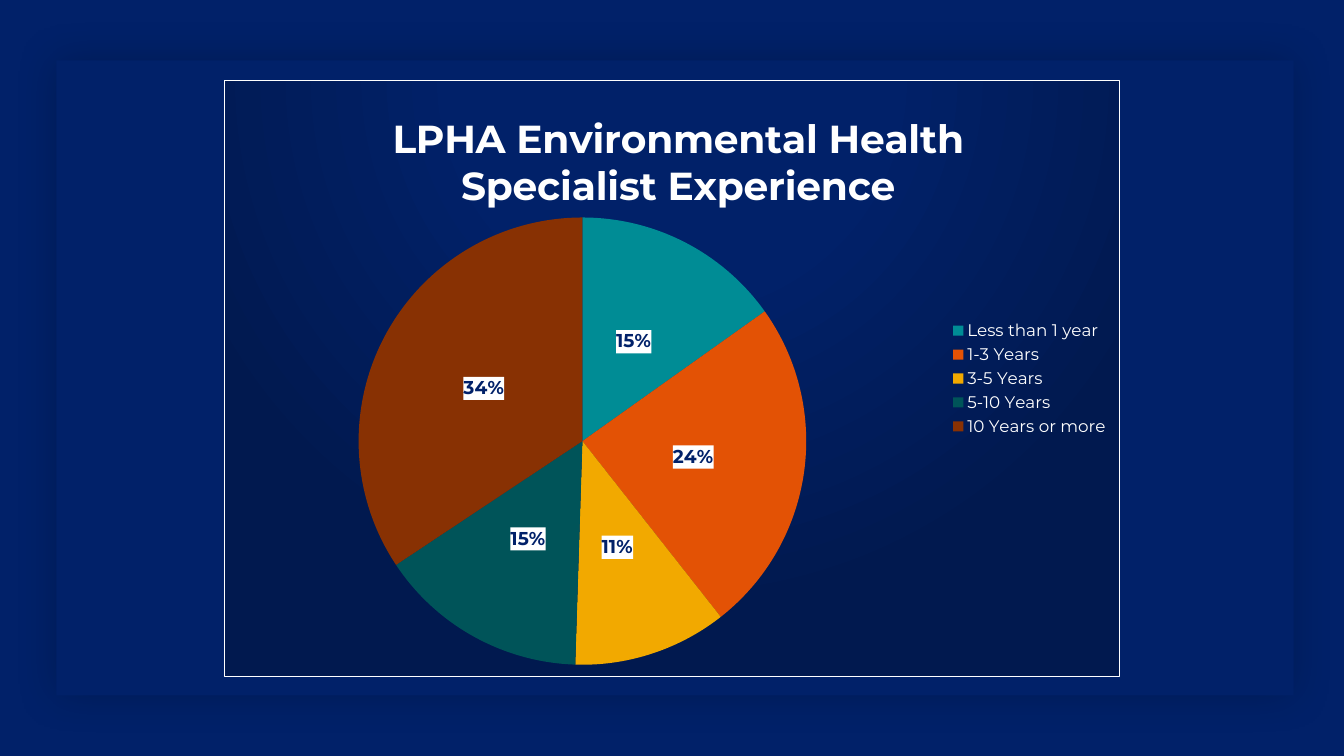
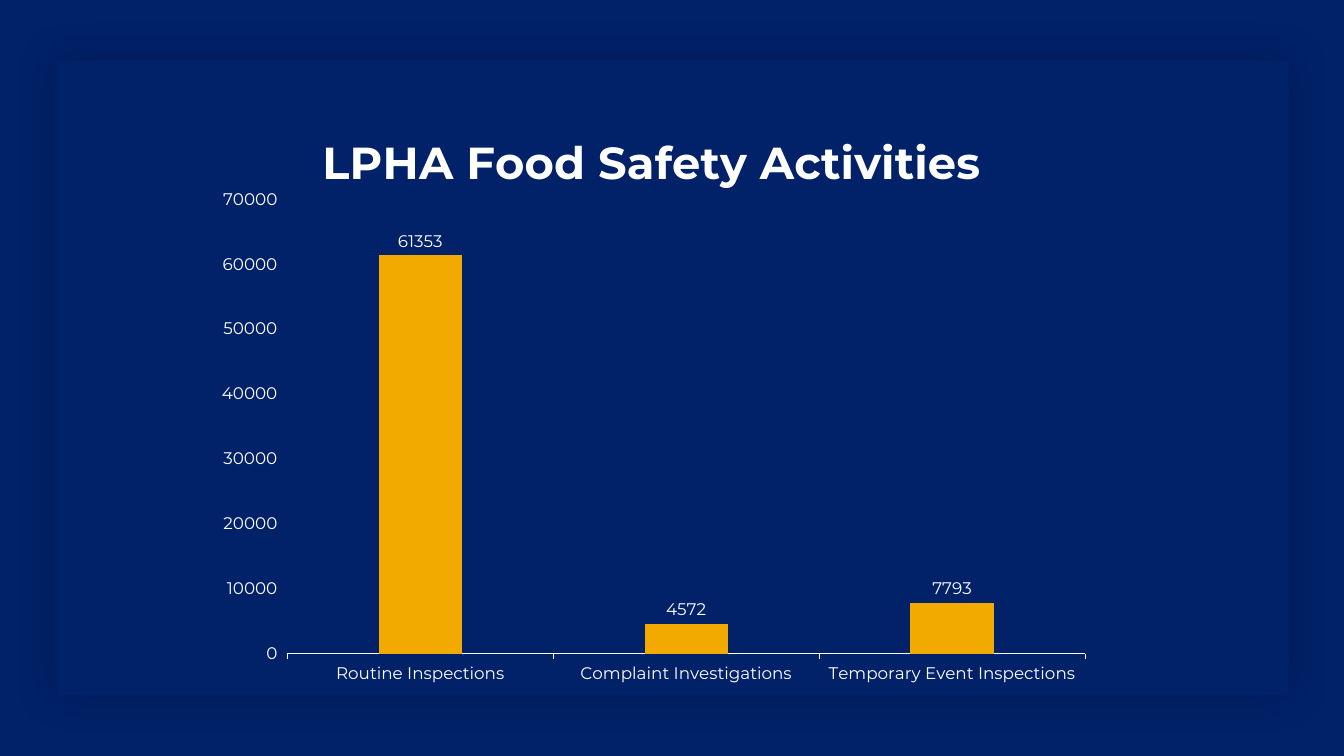
from lxml import etree
from pptx import Presentation
from pptx.chart.data import CategoryChartData
from pptx.dml.color import RGBColor
from pptx.enum.chart import XL_CHART_TYPE, XL_LABEL_POSITION, XL_LEGEND_POSITION, XL_TICK_MARK
from pptx.enum.shapes import MSO_SHAPE
from pptx.oxml import parse_xml
from pptx.oxml.ns import nsdecls, qn
from pptx.util import Inches, Pt

PIE, COLUMNS = XL_CHART_TYPE.PIE, XL_CHART_TYPE.COLUMN_CLUSTERED
CENTER, OUTSIDE_END = XL_LABEL_POSITION.CENTER, XL_LABEL_POSITION.OUTSIDE_END
LEGEND_RIGHT = XL_LEGEND_POSITION.RIGHT
TICK_OUTSIDE = XL_TICK_MARK.OUTSIDE
RECTANGLE = MSO_SHAPE.RECTANGLE

FONT = "Montserrat"
COLORS = {
    "navy": "012169", "deep navy": "01194F", "black": "000000", "white": "FFFFFF",
    "teal": "008C95", "orange": "E35205", "gold": "F2A900",
    "pine": "005459", "brown": "883103",
}
RGB = {name: RGBColor.from_string(value) for name, value in COLORS.items()}

PANEL_SHADOW = f"""<a:effectLst {nsdecls("a")}>
  <a:outerShdw blurRad="{Pt(30)}" dist="0" dir="0" algn="ctr" rotWithShape="0">
    <a:srgbClr val="{COLORS["black"]}"><a:alpha val="20000"/></a:srgbClr>
  </a:outerShdw></a:effectLst>"""
PIE_FRAME = f"""<c:spPr {nsdecls("c", "a")}>
  <a:gradFill rotWithShape="1"><a:gsLst>
    <a:gs pos="0"><a:srgbClr val="{COLORS["navy"]}"/></a:gs>
    <a:gs pos="39000"><a:srgbClr val="{COLORS["navy"]}"/></a:gs>
    <a:gs pos="100000"><a:srgbClr val="{COLORS["deep navy"]}"/></a:gs>
  </a:gsLst><a:path path="circle">
    <a:fillToRect l="50000" t="-80000" r="50000" b="180000"/></a:path></a:gradFill>
  <a:ln w="{Pt(0.75)}"><a:solidFill><a:srgbClr val="{COLORS["white"]}"/></a:solidFill></a:ln>
</c:spPr>"""
CLEAR_FRAME = f"""<c:spPr {nsdecls("c", "a")}><a:noFill/><a:ln><a:noFill/></a:ln></c:spPr>"""
LABEL_BOX = f"""<c:spPr {nsdecls("c", "a")}>
  <a:solidFill><a:srgbClr val="{COLORS["white"]}"/></a:solidFill></c:spPr>"""


def style_font(font, size, color="white", bold=False):
    font.name, font.size, font.bold = FONT, Pt(size), bold
    font.color.rgb = RGB[color]


def set_layout(parent, index, **fractions):
    """Place a chart part by fractions of the chart's width and height."""
    for old_layout in parent.findall(qn("c:layout")):
        parent.remove(old_layout)
    layout = etree.Element(qn("c:layout"))
    manual = etree.SubElement(layout, qn("c:manualLayout"))
    if "w" in fractions:
        etree.SubElement(manual, qn("c:layoutTarget")).set("val", "inner")
    for axis in "xy":
        etree.SubElement(manual, qn(f"c:{axis}Mode")).set("val", "edge")
    for name, value in fractions.items():
        etree.SubElement(manual, qn(f"c:{name}")).set("val", str(value))
    parent.insert(index, layout)


pages = [
    {
        "type": PIE, "panel_width": 12.27, "left": 2.22, "top": 0.79,
        "title": "LPHA Environmental Health Specialist Experience", "title_size": 28,
        "title_at": {"x": 0.18, "y": 0.04},
        "plot_at": {"x": 0.15, "y": 0.23, "w": 0.5, "h": 0.75},
        "frame": PIE_FRAME,
        "values": {"Less than 1 year": 15, "1-3 Years": 24, "3-5 Years": 11,
                   "5-10 Years": 15, "10 Years or more": 34},
    },
    {
        "type": COLUMNS, "panel_width": 12.22, "left": 2.05, "top": 0.97,
        "title": "LPHA Food Safety Activities", "title_size": 32,
        "title_at": {"x": 0.12, "y": 0.04},
        "plot_at": {"x": 0.09, "y": 0.17, "w": 0.89, "h": 0.76},
        "frame": CLEAR_FRAME,
        "values": {"Routine Inspections": 61353, "Complaint Investigations": 4572,
                   "Temporary Event Inspections": 7793},
    },
]

presentation = Presentation()
presentation.slide_width, presentation.slide_height = Inches(13.33), Inches(7.5)
blank_layout = presentation.slide_layouts[6]

for page in pages:
    slide = presentation.slides.add_slide(blank_layout)
    slide.background.fill.solid()
    slide.background.fill.fore_color.rgb = RGB["navy"]

    panel = slide.shapes.add_shape(
        RECTANGLE, Inches(0.56), Inches(0.6), Inches(page["panel_width"]), Inches(6.3))
    panel.fill.solid()
    panel.fill.fore_color.rgb = RGB["navy"]
    panel.line.fill.background()
    panel.element.spPr.append(parse_xml(PANEL_SHADOW))

    chart_data = CategoryChartData()
    chart_data.categories = list(page["values"])
    chart_data.add_series("Series 1", list(page["values"].values()))
    chart = slide.shapes.add_chart(
        page["type"], Inches(page["left"]), Inches(page["top"]),
        Inches(8.89), Inches(5.93), chart_data).chart
    style_font(chart.font, 10)
    chart.element.find(qn("c:txPr")).addprevious(parse_xml(page["frame"]))

    chart.has_title = True
    title = chart.chart_title
    title.text_frame.text = page["title"]
    style_font(title.text_frame.paragraphs[0].runs[0].font, page["title_size"], bold=True)
    title.include_in_layout = False
    set_layout(title.element, 1, **page["title_at"])
    set_layout(chart.element.find(".//" + qn("c:plotArea")), 0, **page["plot_at"])

    plot = chart.plots[0]
    plot.vary_by_categories = page["type"] == PIE
    series = plot.series[0]
    labels = series.data_labels

    if page["type"] == PIE:
        for index, color in enumerate(["teal", "orange", "gold", "pine", "brown"]):
            point_fill = series.points[index].format.fill
            point_fill.solid()
            point_fill.fore_color.rgb = RGB[color]
        labels.show_value = False
        labels.show_percentage = True
        labels.number_format = "0%"
        labels.number_format_is_linked = False
        labels.position = CENTER
        style_font(labels.font, 13.3, "navy", bold=True)
        label_text = chart.element.find(f".//{qn('c:ser')}/{qn('c:dLbls')}/{qn('c:txPr')}")
        label_text.addprevious(parse_xml(LABEL_BOX))
        chart.has_legend = True
        chart.legend.position = LEGEND_RIGHT
        chart.legend.include_in_layout = False
        style_font(chart.legend.font, 12)
    else:
        chart.has_legend = False
        plot.gap_width, plot.overlap = 219, -27
        series.format.fill.solid()
        series.format.fill.fore_color.rgb = RGB["gold"]
        labels.show_value = True
        labels.position = OUTSIDE_END
        style_font(labels.font, 12)
        for axis in (chart.category_axis, chart.value_axis):
            axis.has_major_gridlines = False
            axis.major_tick_mark = TICK_OUTSIDE
            style_font(axis.tick_labels.font, 12)
        chart.category_axis.format.line.width = Pt(0.75)
        chart.category_axis.format.line.color.rgb = RGB["white"]
        chart.value_axis.format.line.fill.background()
        chart.value_axis.minimum_scale = 0
        chart.value_axis.maximum_scale = 70000
        chart.value_axis.major_unit = 10000

presentation.save("out.pptx")
